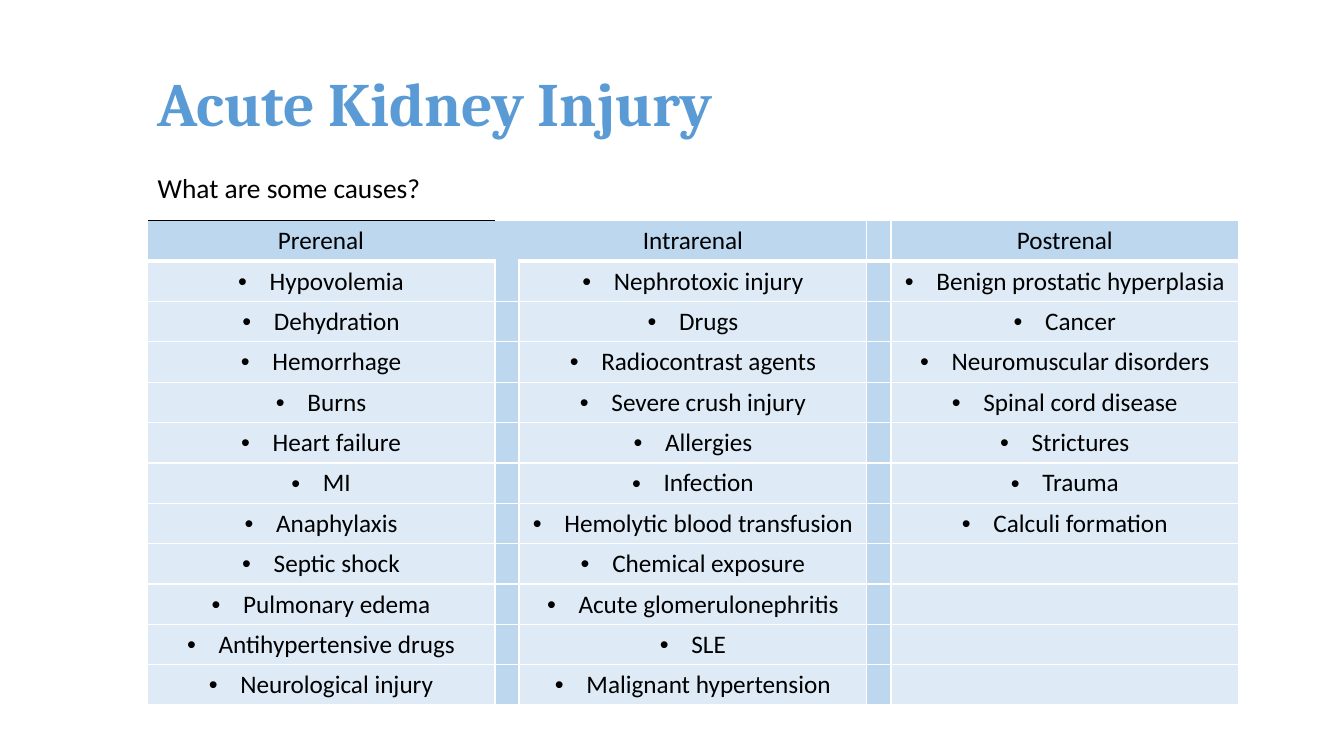
"""Build the slide on the causes of acute kidney injury."""
from itertools import zip_longest

from lxml.etree import SubElement
from pptx import Presentation
from pptx.dml.color import RGBColor
from pptx.enum.text import MSO_ANCHOR as Anchor, PP_ALIGN as Align
from pptx.oxml.ns import qn
from pptx.util import Pt

TITLE = "Acute Kidney Injury"
QUESTION = "What are some causes?"
CAUSES = {
    "Prerenal": [
        "Hypovolemia", "Dehydration", "Hemorrhage", "Burns", "Heart failure", "MI",
        "Anaphylaxis", "Septic shock", "Pulmonary edema", "Antihypertensive drugs",
        "Neurological injury",
    ],
    "Intrarenal": [
        "Nephrotoxic injury", "Drugs", "Radiocontrast agents", "Severe crush injury",
        "Allergies", "Infection", "Hemolytic blood transfusion", "Chemical exposure",
        "Acute glomerulonephritis", "SLE", "Malignant hypertension",
    ],
    "Postrenal": [
        "Benign prostatic hyperplasia", "Cancer", "Neuromuscular disorders",
        "Spinal cord disease", "Strictures", "Trauma", "Calculi formation",
    ],
}
BLACK, WHITE, BLUE = "000000", "FFFFFF", "5B9BD5"
HEADER_FILL, CAUSE_FILL = "BDD7EE", "DEEBF7"
LEFT, TABLE_TOP = 105.1, 157.7
CAUSE_WIDTH, GAP_WIDTH, ROW_HEIGHT = 248.4, 16.6, 28.8
BULLET_INDENT = 22.5
THIN = {side: (WHITE, 1) for side in "LRTB"}
HEADER_EDGES = {**THIN, "B": (WHITE, 3)}
SPECIAL_EDGES = {
    (0, 0): {"L": (WHITE, 1), "T": (BLACK, 1), "B": (WHITE, 3)},
    (0, 1): {},
    (0, 2): {"T": (WHITE, 1), "R": (WHITE, 1), "B": (WHITE, 3)},
    (1, 1): {"L": (WHITE, 1), "R": (WHITE, 1), "B": (WHITE, 1)},
}


def color(hex_code):
    return RGBColor.from_string(hex_code)


def write(frame, text, size=18, font="Calibri", ink=BLACK, bold=False,
          align=Align.LEFT, spacing=1.0, bullet=False):
    line = frame.paragraphs[0]
    line.text = text
    line.alignment = align
    line.line_spacing = spacing
    if bullet:
        props = line._p.get_or_add_pPr()
        props.set("marL", str(Pt(BULLET_INDENT)))
        props.set("indent", str(-Pt(BULLET_INDENT)))
        SubElement(props, qn("a:buFont"), typeface="Arial")
        SubElement(props, qn("a:buChar"), char="•")
    style = line.runs[0].font
    style.size, style.name, style.bold = Pt(size), font, bold
    style.color.rgb = color(ink)


def add_text(slide, text, left, top, width, height, anchor=Anchor.TOP, **style):
    frame = slide.shapes.add_textbox(Pt(left), Pt(top), Pt(width), Pt(height)).text_frame
    frame.word_wrap = True
    frame.vertical_anchor = anchor
    write(frame, text, **style)


def set_edges(cell, edges):
    props = cell._tc.get_or_add_tcPr()
    for side in "LRTB":
        ink, width = edges.get(side, (None, 0))
        edge = SubElement(props, qn(f"a:ln{side}"), w=str(Pt(width)))
        if ink:
            SubElement(SubElement(edge, qn("a:solidFill")), qn("a:srgbClr"), val=ink)
        else:
            SubElement(edge, qn("a:noFill"))


def add_causes(slide):
    rows = [tuple(CAUSES), *zip_longest(*CAUSES.values(), fillvalue="")]
    groups = len(CAUSES)
    widths = ([CAUSE_WIDTH, GAP_WIDTH] * groups)[:-1]
    table = slide.shapes.add_table(
        len(rows), len(widths), Pt(LEFT), Pt(TABLE_TOP),
        Pt(sum(widths)), Pt(ROW_HEIGHT * len(rows))).table
    table.first_row = table.horz_banding = False
    for column, width in zip(table.columns, widths):
        column.width = Pt(width)
    for r, row in enumerate(rows):
        table.rows[r].height = Pt(ROW_HEIGHT)
        for c in range(len(widths)):
            cell = table.cell(r, c)
            is_gap = c % 2 == 1
            usual = THIN if r else HEADER_EDGES
            set_edges(cell, SPECIAL_EDGES.get((r, c), usual))
            cell.fill.solid()
            cell.fill.fore_color.rgb = color(HEADER_FILL if r == 0 or is_gap else CAUSE_FILL)
            if not is_gap and row[c // 2]:
                write(cell.text_frame, row[c // 2], align=Align.CENTER, bullet=r > 0)


def main():
    deck = Presentation()
    deck.slide_width, deck.slide_height = Pt(960), Pt(540)
    slide = deck.slides.add_slide(deck.slide_layouts[6])
    add_text(slide, QUESTION, 105.6, 125.3, 640, 30, size=19.6, spacing=0.7)
    add_text(slide, TITLE, LEFT, 20.9, 711.4, 104.4, anchor=Anchor.MIDDLE,
             size=44, font="Cambria", ink=BLUE, bold=True)
    add_causes(slide)
    deck.save("out.pptx")


if __name__ == "__main__":
    main()
